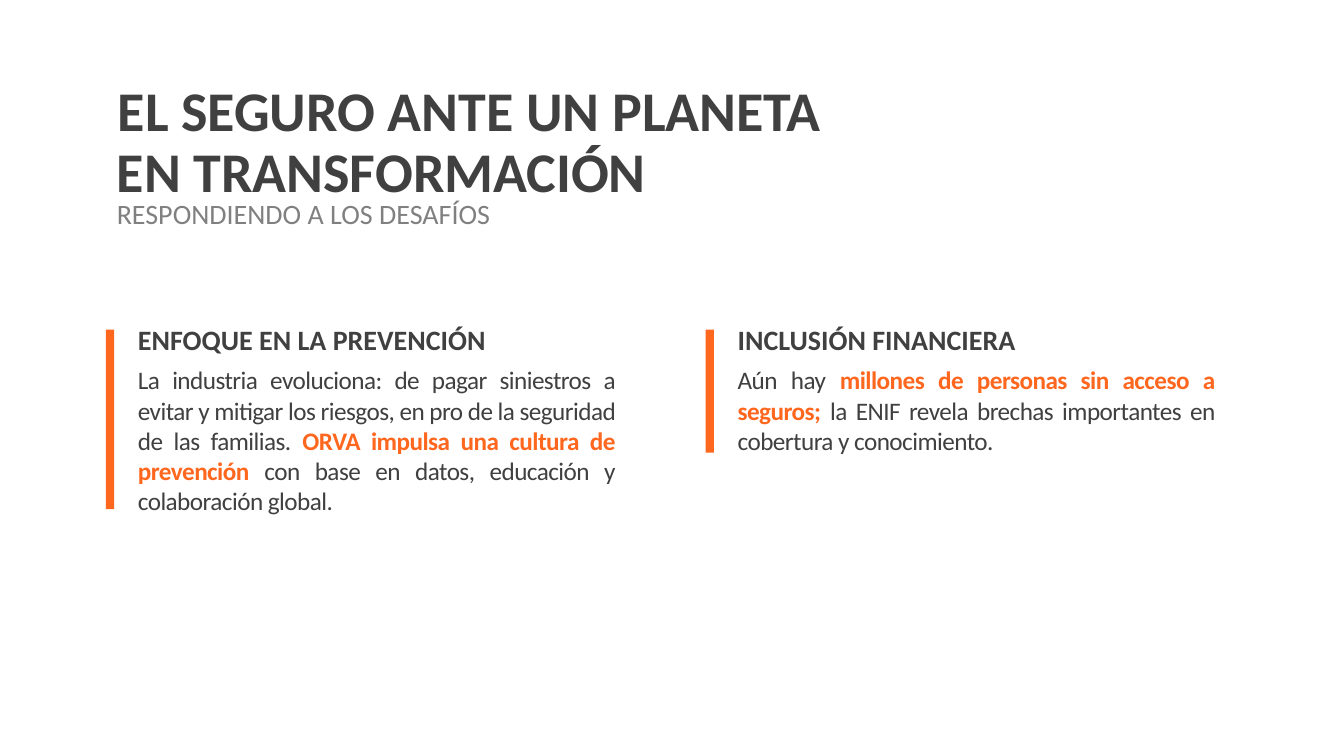
"""Build the slide on insurance in a changing planet."""
from dataclasses import dataclass

from pptx import Presentation
from pptx.dml.color import RGBColor
from pptx.enum.shapes import MSO_SHAPE as Shape
from pptx.enum.text import MSO_ANCHOR as Anchor, MSO_AUTO_SIZE as AutoSize, PP_ALIGN as Align
from pptx.util import Pt


@dataclass(frozen=True)
class Theme:
    """Colours, font and type sizes of the slide."""
    font: str = "Calibri"
    dark: str = "404040"
    grey: str = "808080"
    accent: str = "FF671F"
    title: int = 40
    heading: int = 20
    body: int = 18


def add_span(para, text, *, font, size, color, bold=False, tracking=0):
    """Append formatted text to a paragraph."""
    span = para.add_run()
    span.text = text
    span.font.name = font
    span.font.size = Pt(size)
    span.font.bold = bold
    span.font.color.rgb = RGBColor.from_string(color)
    if tracking:
        span._r.get_or_add_rPr().set("spc", str(round(tracking * 100)))


class SlideBuilder:
    """Draws styled elements on one slide."""

    def __init__(self, slide, theme):
        """Keep the slide and its theme."""
        self.slide = slide
        self.theme = theme

    def fill_box(self, box, spans, size, *, align=Align.LEFT, spacing=0.9, anchor=Anchor.TOP,
                 auto_size=AutoSize.NONE, tracking=0, indent=0):
        """Fill a box with one paragraph of (text, colour, bold) spans."""
        frame = box.text_frame
        frame.word_wrap = True
        frame.auto_size = auto_size
        frame.vertical_anchor = anchor
        para = frame.paragraphs[0]
        para.alignment = align
        para.line_spacing = spacing
        para.space_before = Pt(0)
        if indent:
            para._p.get_or_add_pPr().set("indent", str(Pt(indent)))
        for text, color, bold in spans:
            add_span(para, text, font=self.theme.font, size=size, color=color,
                     bold=bold, tracking=tracking)

    def title(self, text, left, top, width, height):
        """Place and format the title placeholder."""
        box = self.slide.shapes.title
        box.left, box.top, box.width, box.height = map(Pt, (left, top, width, height))
        self.fill_box(box, [(text, self.theme.dark, True)], self.theme.title,
                      anchor=Anchor.MIDDLE, indent=0.72)

    def text(self, spans, size, left, top, width, height, **style):
        """Add a text box."""
        box = self.slide.shapes.add_textbox(Pt(left), Pt(top), Pt(width), Pt(height))
        self.fill_box(box, spans, size, **style)

    def bar(self, left, top, width, height):
        """Add an accent bar."""
        bar = self.slide.shapes.add_shape(Shape.RECTANGLE, Pt(left), Pt(top), Pt(width), Pt(height))
        bar.shadow.inherit = False
        bar.fill.solid()
        bar.fill.fore_color.rgb = RGBColor.from_string(self.theme.accent)
        bar.line.fill.background()

    def topic(self, left, heading, before, emphasis, after, body_height, bar_height):
        """Add a bar with a heading and a justified paragraph beside it."""
        theme = self.theme
        text_left, width = left + 15.84, 355
        self.text([(before, theme.dark, False), (emphasis, theme.accent, True),
                   (after, theme.dark, False)], theme.body, text_left, 257, width, body_height,
                  align=Align.JUSTIFY, spacing=1.0, tracking=-0.4,
                  auto_size=AutoSize.SHAPE_TO_FIT_TEXT)
        self.text([(heading, theme.dark, True)], theme.heading, text_left, 229.7, width, 26.6)
        self.bar(left, 235.5, 6, bar_height)


TOPICS = [
    ("ENFOQUE EN LA PREVENCIÓN",
     "La industria evoluciona: de pagar siniestros a evitar y mitigar los riesgos, "
     "en pro de la seguridad de las familias. ",
     "ORVA impulsa una cultura de prevención",
     " con base en datos, educación y colaboración global.", 116.6, 128.2),
    ("INCLUSIÓN FINANCIERA",
     "Aún hay ",
     "millones de personas sin acceso a seguros;",
     " la ENIF revela brechas importantes en cobertura y conocimiento.", 72.7, 87.8),
]


def main():
    """Build and save the deck."""
    deck = Presentation()
    deck.slide_width, deck.slide_height = Pt(960), Pt(540)
    theme = Theme()
    page = SlideBuilder(deck.slides.add_slide(deck.slide_layouts[5]), theme)
    page.title("EL SEGURO ANTE UN PLANETA EN TRANSFORMACIÓN", 76.3, 69.1, 531.4, 67)
    page.text([("RESPONDIENDO A LOS DESAFÍOS", theme.grey, False)], theme.heading,
              76.3, 139.7, 298.8, 26.6)
    for column, topic in enumerate(TOPICS):
        page.topic(75.6 + column * 428.4, *topic)
    deck.save("out.pptx")


if __name__ == "__main__":
    main()
